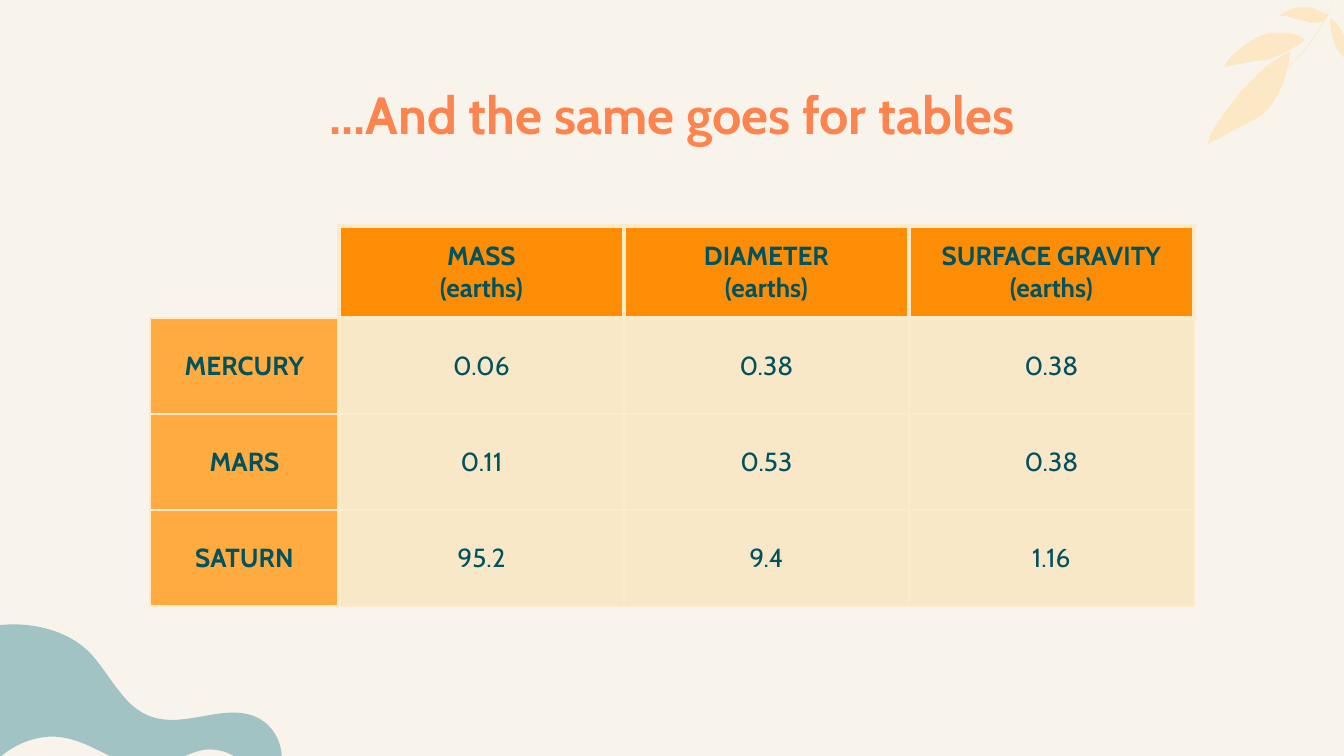
from lxml.etree import SubElement
from pptx import Presentation
from pptx.dml.color import RGBColor
from pptx.enum.text import MSO_ANCHOR, PP_ALIGN
from pptx.oxml.ns import qn
from pptx.util import Emu, Pt

SCALE = 914400 / 134.4
FONT = "Cabin"
COLORS = {
    "background": "F8F4EC", "title": "FC854F", "text": "00525F",
    "header": "FC8D05", "planet": "FFAB40", "value": "F9E8C8",
    "border": "FDEAC8", "leaf": "FDE6BE", "wave": "6BA4AA",
}
HEADINGS = ["MASS", "DIAMETER", "SURFACE GRAVITY"]
PLANETS = [
    ("MERCURY", "0.06", "0.38", "0.38"),
    ("MARS", "0.11", "0.53", "0.38"),
    ("SATURN", "95.2", "9.4", "1.16"),
]
STEM = [
    (1334, -2), (1322, 30, 1300, 62, 1262, 88), (1301, 62, 1323, 30, 1334, -2),
]
LEAVES = [
    [(1290, 52), (1276, 58, 1266, 66, 1256, 76), (1241, 90, 1229, 106, 1219, 121),
     (1214, 128, 1209, 135, 1208, 144), (1212, 142), (1246, 124),
     (1251, 121, 1256, 119, 1261, 116), (1277, 104, 1289, 73, 1290, 52)],
    [(1293, 34), (1284, 32, 1275, 32, 1266, 34), (1253, 38, 1241, 47, 1231, 57),
     (1228, 61, 1225, 64, 1224, 67), (1239, 64, 1252, 61, 1266, 60),
     (1280, 56, 1295, 48, 1305, 40), (1302, 37, 1298, 35, 1293, 34)],
    [(1331, 19), (1330, 18), (1330, 27, 1332, 36, 1335, 45),
     (1339, 52, 1344, 59, 1351, 64), (1350, 51, 1346, 37, 1338, 25),
     (1336, 22, 1334, 19, 1331, 19)],
    [(1315, 9), (1312, 7, 1307, 7, 1303, 7), (1295, 7, 1287, 10, 1279, 16),
     (1281, 16, 1284, 16, 1286, 16), (1292, 18, 1298, 20, 1305, 21),
     (1307, 22, 1310, 23, 1314, 23), (1319, 23, 1327, 22, 1328, 15),
     (1324, 13, 1320, 11, 1315, 9)],
]
WAVE = [
    (280, 745), (282, 751, 282, 758, 282, 765), (255, 774),
    (241, 759, 226, 747, 203, 750), (188, 753, 176, 762, 163, 765),
    (144, 770, 126, 763, 112, 757), (97, 750, 82, 741, 65, 738),
    (38, 732, 4, 747, -11, 770), (-12, 627),
    (27, 619, 69, 630, 91, 654), (103, 667, 110, 680, 120, 692),
    (129, 704, 142, 716, 160, 719), (188, 724, 220, 708, 247, 714),
    (265, 718, 276, 731, 280, 745),
]


def px(length):
    return Emu(round(length * SCALE))


def color(name):
    return RGBColor.from_string(COLORS[name])


def bend(shape, segments):
    path = next(shape._element.iter(qn("a:path")))
    for line, segment in zip(path.findall(qn("a:lnTo")), segments[1:]):
        if len(segment) == 2:
            continue
        curve = SubElement(path, qn("a:cubicBezTo"))
        for x, y in zip(segment[::2], segment[1::2]):
            SubElement(curve, qn("a:pt"), x=str(px(x) - shape.left),
                       y=str(px(y) - shape.top))
        path.replace(line, curve)


def add_outline(page, segments, fill, opacity):
    points = [(px(segment[-2]), px(segment[-1])) for segment in segments]
    builder = page.shapes.build_freeform(*points[0], scale=1.0)
    builder.add_line_segments(points[1:], close=True)
    shape = builder.convert_to_shape()
    bend(shape, segments)
    shape.shadow.inherit = False
    shape.line.fill.background()
    shape.fill.solid()
    shape.fill.fore_color.rgb = color(fill)
    tint = shape.fill._xPr.find(qn("a:solidFill"))[0]
    SubElement(tint, qn("a:alpha"), val=str(opacity * 1000))


def write(frame, lines, size, ink, bold):
    for index, line in enumerate(lines):
        para = frame.add_paragraph() if index else frame.paragraphs[0]
        para.alignment = PP_ALIGN.CENTER
        span = para.add_run()
        span.text = line
        span.font.name = FONT
        span.font.size = Pt(size)
        span.font.bold = bold
        span.font.color.rgb = color(ink)


def add_title(page, text):
    box = page.shapes.add_textbox(px(46), px(69), px(1252), px(85))
    frame = box.text_frame
    frame.word_wrap = True
    frame.vertical_anchor = MSO_ANCHOR.TOP
    frame.margin_left = frame.margin_right = px(13)
    frame.margin_top = frame.margin_bottom = px(13)
    write(frame, [text], 28, "title", True)


def set_borders(cell, row, column):
    corner = row == 0 and column == 0
    thick = {
        "L": row == 0 or column == 1,
        "R": row == 0 or column == 0,
        "T": row == 0 or (row == 1 and column > 0),
        "B": row == 0 and column > 0,
    }
    properties = cell._tc.get_or_add_tcPr()
    for side, heavy in thick.items():
        line = SubElement(properties, qn(f"a:ln{side}"),
                          w=str(Pt(2.25 if heavy else 1.5)))
        name = "background" if corner and side in "LT" else "border"
        fill = SubElement(line, qn("a:solidFill"))
        SubElement(fill, qn("a:srgbClr"), val=COLORS[name])


def fill_cell(cell, row, column, lines):
    set_borders(cell, row, column)
    cell.margin_left = cell.margin_right = px(13)
    cell.margin_top = cell.margin_bottom = px(9)
    cell.vertical_anchor = MSO_ANCHOR.MIDDLE
    if not lines:
        cell.fill.background()
        return
    cell.fill.solid()
    kind = "header" if row == 0 else "planet" if column == 0 else "value"
    cell.fill.fore_color.rgb = color(kind)
    write(cell.text_frame, lines, 14, "text", kind != "value")


def add_planet_table(page):
    widths, heights = [189] + [285] * 3, [92] + [96] * 3
    table = page.shapes.add_table(4, 4, px(150), px(226), px(sum(widths)),
                                  px(sum(heights))).table
    table.first_row = table.horz_banding = False
    for column, width in zip(table.columns, widths):
        column.width = px(width)
    for row, height in zip(table.rows, heights):
        row.height = px(height)
    rows = [[[]] + [[heading, "(earths)"] for heading in HEADINGS]]
    rows += [[[text] for text in planet] for planet in PLANETS]
    for row, entries in enumerate(rows):
        for column, lines in enumerate(entries):
            fill_cell(table.cell(row, column), row, column, lines)


def main():
    deck = Presentation()
    deck.slide_width, deck.slide_height = px(1344), px(756)
    page = deck.slides.add_slide(deck.slide_layouts[6])
    page.background.fill.solid()
    page.background.fill.fore_color.rgb = color("background")
    for outline in [STEM] + LEAVES:
        add_outline(page, outline, "leaf", 84)
    add_outline(page, WAVE, "wave", 61)
    add_title(page, "...And the same goes for tables")
    add_planet_table(page)
    deck.save("out.pptx")


if __name__ == "__main__":
    main()
